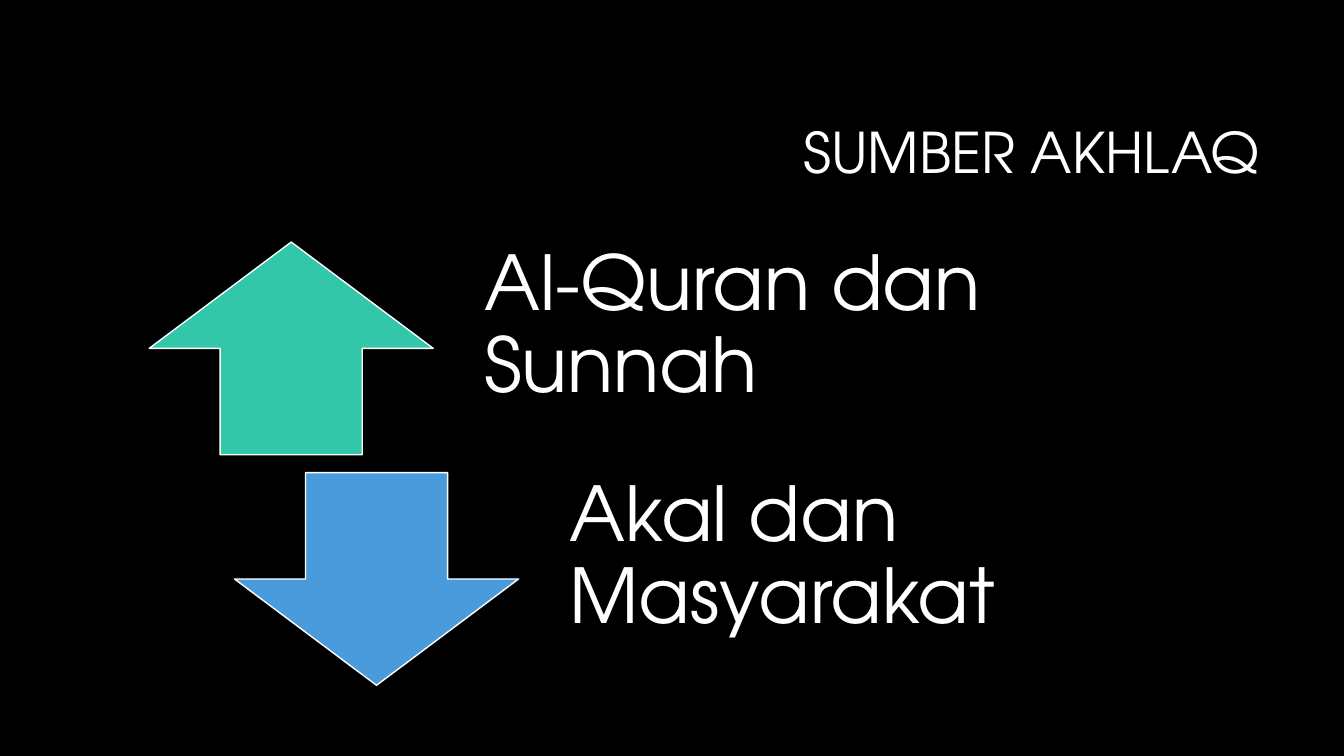
from pptx import Presentation
from pptx.dml.color import RGBColor
from pptx.enum.shapes import MSO_SHAPE
from pptx.enum.text import MSO_ANCHOR, PP_ALIGN
from pptx.util import Cm, Pt

TITLE = "SUMBER AKHLAQ"
SOURCES = [
    ("Al-Quran dan Sunnah", MSO_SHAPE.UP_ARROW, "green"),
    ("Akal dan Masyarakat", MSO_SHAPE.DOWN_ARROW, "blue"),
]
COLORS = {"black": "000000", "white": "FFFFFF", "green": "32C7A9", "blue": "4A9BDC"}
FONT = "TeX Gyre Adventor"

# Centimetres
ARROW_LEFT, ARROW_TOP = 3.76, 6.1
ARROW_WIDTH, ARROW_HEIGHT = 7.16, 5.36
STEP_RIGHT, STEP_DOWN = 2.15, 5.81
LABEL_OFFSET, LABEL_WIDTH, LABEL_INSET = 7.37, 16.84, 1.07


def color(name):
    return RGBColor.from_string(COLORS[name])


def add_text(slide, text, left, top, width, height, size, align=PP_ALIGN.LEFT):
    frame = slide.shapes.add_textbox(Cm(left), Cm(top), Cm(width), Cm(height)).text_frame
    frame.word_wrap = True
    frame.vertical_anchor = MSO_ANCHOR.MIDDLE
    frame.text = text
    paragraph = frame.paragraphs[0]
    paragraph.alignment = align
    paragraph.line_spacing = 0.9
    font = paragraph.runs[0].font
    font.name, font.size = FONT, Pt(size)
    font.color.rgb = color("white")
    return frame


def add_arrow(slide, preset, fill, left, top):
    arrow = slide.shapes.add_shape(
        preset, Cm(left), Cm(top), Cm(ARROW_WIDTH), Cm(ARROW_HEIGHT))
    arrow.shadow.inherit = False
    arrow.fill.solid()
    arrow.fill.fore_color.rgb = color(fill)
    arrow.line.color.rgb = color("white")
    arrow.line.width = Pt(1)


def main():
    deck = Presentation()
    deck.slide_width, deck.slide_height = Cm(33.87), Cm(19.05)
    slide = deck.slides.add_slide(deck.slide_layouts[6])
    slide.background.fill.solid()
    slide.background.fill.fore_color.rgb = color("black")

    add_text(slide, TITLE, 8.05, 2.13, 23.93, 3.58, 40, PP_ALIGN.RIGHT)
    for index, (source, preset, fill) in enumerate(SOURCES):
        left = ARROW_LEFT + index * STEP_RIGHT
        top = ARROW_TOP + index * STEP_DOWN
        add_arrow(slide, preset, fill, left, top)
        label = add_text(slide, source, left + LABEL_OFFSET, top,
                         LABEL_WIDTH, ARROW_HEIGHT, 54)
        label.margin_left = label.margin_right = label.margin_bottom = Cm(LABEL_INSET)
        label.margin_top = 0

    deck.save("out.pptx")


if __name__ == "__main__":
    main()
